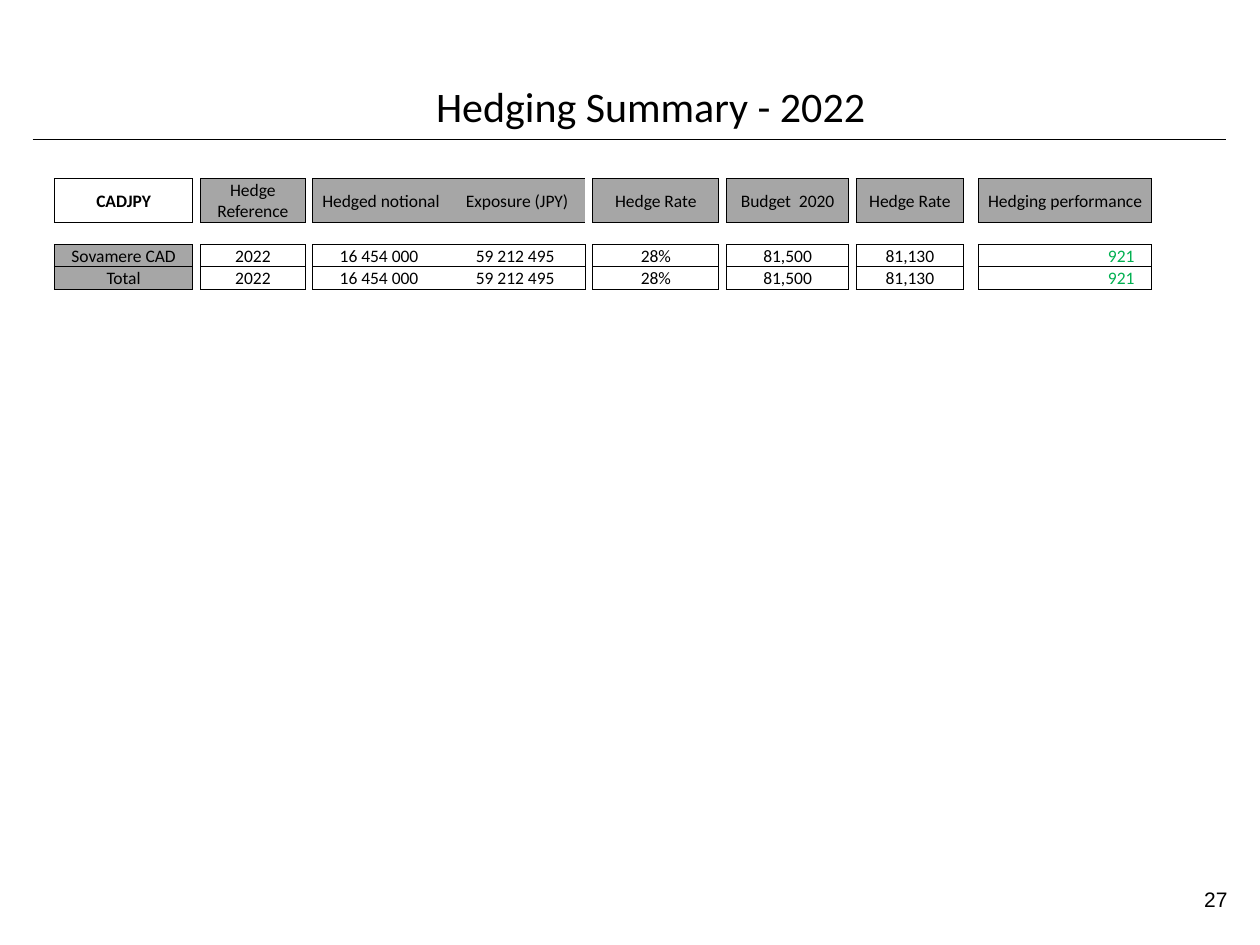
from lxml.etree import SubElement
from pptx import Presentation
from pptx.dml.color import RGBColor
from pptx.enum.shapes import MSO_CONNECTOR
from pptx.enum.text import MSO_ANCHOR, MSO_AUTO_SIZE, PP_ALIGN
from pptx.oxml.ns import qn
from pptx.util import Pt

COLORS = {"black": "000000", "grey": "A6A6A6", "green": "00B050"}

# Each column: width, header, then the two body rows
GAP = (4.4, "", "", "")
COLUMNS = [
    (79.2, "CADJPY", "Sovamere CAD", "Total"), GAP,
    (59.8, "Hedge Reference", "2022", "2022"), GAP,
    (77.8, "Hedged notional", "16 454 000 ", "16 454 000 "),
    (77.8, "Exposure (JPY)", "59 212 495 ", "59 212 495 "), GAP,
    (72, "Hedge Rate", "28%", "28%"), GAP,
    (69.8, "Budget  2020", "81,500", "81,500"), GAP,
    (61.2, "Hedge Rate", "81,130", "81,130"), GAP, GAP,
    (98.6, "Hedging performance", "921", "921"),
]
EXPOSURE, PERFORMANCE = 5, 14
RATES = (9, 11)
ROW_HEIGHTS = [24.7, 12.5, 12.5, 12.5]


class Deck:
    font = "Calibri"

    def __init__(self, width, height):
        self.prs = Presentation()
        self.prs.slide_width, self.prs.slide_height = Pt(width), Pt(height)
        self.s = self.prs.slides.add_slide(self.prs.slide_layouts[5])

    def set_text(self, tf, text, size, align, font=None, color="black", bold=False):
        tf.text = text
        p = tf.paragraphs[0]
        p.alignment = align
        for r in p.runs:
            r.font.name, r.font.size, r.font.bold = font or self.font, Pt(size), bold
            r.font.color.rgb = RGBColor.from_string(COLORS[color])
        if not text:
            SubElement(p._p, qn("a:endParaRPr"), sz=str(size * 100))

    def title(self, text, x, y, w, h):
        sp = self.s.shapes.title
        sp.left, sp.top, sp.width, sp.height = Pt(x), Pt(y), Pt(w), Pt(h)
        tf = sp.text_frame
        tf.auto_size, tf.vertical_anchor = MSO_AUTO_SIZE.NONE, MSO_ANCHOR.BOTTOM
        self.set_text(tf, text, 24, PP_ALIGN.CENTER)

    def text(self, text, x, y, w, h, size, align, font):
        tf = self.s.shapes.add_textbox(Pt(x), Pt(y), Pt(w), Pt(h)).text_frame
        tf.word_wrap = True
        self.set_text(tf, text, size, align, font)

    def rule(self, x1, x2, y):
        line = self.s.shapes.add_connector(MSO_CONNECTOR.STRAIGHT, Pt(x1), Pt(y), Pt(x2), Pt(y))
        line.line.width = Pt(0.75)
        line.line.color.rgb = RGBColor.from_string(COLORS["black"])
        SubElement(line._element.spPr, qn("a:effectLst"))

    def border(self, cell, side, shown):
        ln = SubElement(cell._tc.get_or_add_tcPr(), qn(f"a:ln{side}"), w=str(Pt(0.5)))
        if shown:
            fill = SubElement(ln, qn("a:solidFill"))
            SubElement(fill, qn("a:srgbClr"), val=COLORS["black"])
        else:
            SubElement(ln, qn("a:noFill"))

    def table(self, x, y, columns, heights):
        grid = [[col[1] for col in columns], [""] * len(columns),
                [col[2] for col in columns], [col[3] for col in columns]]
        width = sum(col[0] for col in columns)
        frame = self.s.shapes.add_table(len(grid), len(columns), Pt(x), Pt(y),
                                        Pt(width), Pt(sum(heights)))
        tbl = frame.table
        tbl.first_row = tbl.horz_banding = False
        for column, col in zip(tbl.columns, columns):
            column.width = Pt(col[0])
        for row, height in zip(tbl.rows, heights):
            row.height = Pt(height)

        def boxed(r, c):
            return 0 <= r < len(grid) and 0 <= c < len(columns) and bool(grid[r][c])

        def upright(r, c):
            # Left edge of column c; notional and exposure share a box
            if c == EXPOSURE or (r == 0 and c == EXPOSURE + 1):
                return False
            return boxed(r, c - 1) or boxed(r, c)

        def level(r, c):
            # Top edge of row r
            return boxed(r - 1, c) or boxed(r, c)

        for r, texts in enumerate(grid):
            for c, text in enumerate(texts):
                cell = tbl.cell(r, c)
                result = c == PERFORMANCE and r > 0
                cell.margin_left = cell.margin_top = Pt(0.72)
                cell.margin_right = Pt(9.7 if result else 0.72)
                cell.margin_bottom = Pt(0)
                cell.vertical_anchor = (MSO_ANCHOR.BOTTOM if c in RATES and r > 0
                                        else MSO_ANCHOR.MIDDLE)
                for side, shown in (("L", upright(r, c)), ("R", upright(r, c + 1)),
                                    ("T", level(r, c)), ("B", level(r + 1, c))):
                    self.border(cell, side, shown)
                # Headers and row labels are grey, the corner is not
                if text and (r == 0) != (c == 0):
                    cell.fill.solid()
                    cell.fill.fore_color.rgb = RGBColor.from_string(COLORS["grey"])
                else:
                    cell.fill.background()
                self.set_text(cell.text_frame, text, 10,
                              PP_ALIGN.RIGHT if result else PP_ALIGN.CENTER,
                              color="green" if result else "black", bold=r == c == 0)


def main():
    deck = Deck(720, 540)
    # Heading and page number
    deck.rule(18.7, 700.6, 79.9)
    deck.text("27", 540.7, 503.3, 167.8, 25.9, 12, PP_ALIGN.RIGHT, "Arial")
    deck.title("Hedging Summary - 2022", 177.1, 8.6, 389.5, 69.8)
    # Hedging table
    deck.table(31, 102.2, COLUMNS, ROW_HEIGHTS)
    deck.prs.save("out.pptx")


if __name__ == "__main__":
    main()
